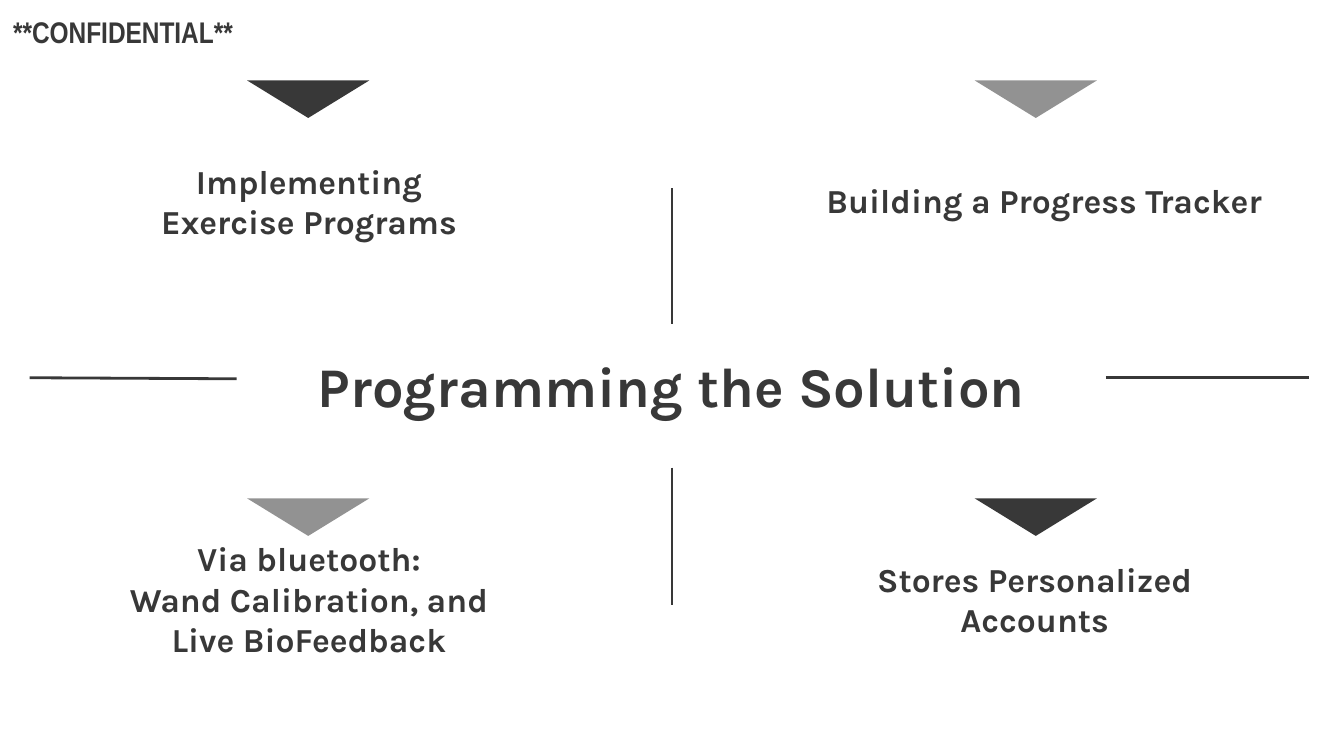
from dataclasses import dataclass

from lxml.etree import SubElement
from pptx import Presentation
from pptx.dml.color import RGBColor
from pptx.enum.shapes import MSO_CONNECTOR, MSO_SHAPE
from pptx.enum.text import MSO_ANCHOR, PP_ALIGN
from pptx.oxml.ns import qn
from pptx.util import Cm, Pt


@dataclass(frozen=True)
class Theme:
    dark: RGBColor = RGBColor(0x38, 0x38, 0x38)
    gray: RGBColor = RGBColor(0x92, 0x92, 0x92)
    head: Pt = Pt(30)
    body: Pt = Pt(18)
    mark: Pt = Pt(16)
    rule: Pt = Pt(1.5)
    font: str = "Karla"
    slim: str = "Arial Narrow"


THEME = Theme()
PAD = Cm(0.25)
LEFT, RIGHT = 4.67, 18.42
TOP, LOW = 1.52, 9.42

# Each topic: lines, box (left, top, width, height)
TOPICS = [
    (["Implementing Exercise Programs"], (2.49, 3.33, 6.7, 0.94)),
    (["Via bluetooth:", "Wand Calibration, and Live BioFeedback"],
     (1.8, 10.85, 8.08, 0.94)),
    (["Building a Progress Tracker"], (13.87, 2.11, 11.73, 3.35)),
    (["Stores Personalized Accounts"], (15.11, 10.85, 8.89, 0.94)),
]
ARROWS = [
    (LEFT, TOP, THEME.dark),
    (LEFT, LOW, THEME.gray),
    (RIGHT, TOP, THEME.gray),
    (RIGHT, LOW, THEME.dark),
]
# Rules around the title: start x, start y, end x, end y
RULES = [
    (0.56, 7.14, 4.47, 7.16),
    (20.9, 7.14, 24.74, 7.14),
    (12.7, 8.84, 12.7, 11.43),
    (12.7, 3.56, 12.7, 6.12),
]


def style(item, form):
    for name, value in form.items():
        setattr(item, name, value)


def add_text(slide, lines, box, size, font=THEME.font,
             align=PP_ALIGN.CENTER, anchor=MSO_ANCHOR.MIDDLE):
    frame = slide.shapes.add_textbox(*map(Cm, box)).text_frame
    style(frame, {
        "word_wrap": True, "vertical_anchor": anchor,
        "margin_left": PAD, "margin_right": PAD,
        "margin_top": PAD, "margin_bottom": PAD,
    })
    frame.text = "\n".join(lines)
    for para in frame.paragraphs:
        para.alignment = align
        for run in para.runs:
            style(run.font, {"name": font, "size": size, "bold": True})
            run.font.color.rgb = THEME.dark


def add_arrow(slide, left, top, color):
    """Add a triangle that points down."""
    shape = slide.shapes.add_shape(
        MSO_SHAPE.ISOSCELES_TRIANGLE, Cm(left), Cm(top), Cm(2.31), Cm(0.71))
    shape.rotation = 180
    shape.shadow.inherit = False
    shape.fill.solid()
    shape.fill.fore_color.rgb = color
    shape.line.fill.background()


def add_rule(slide, ends):
    rule = slide.shapes.add_connector(MSO_CONNECTOR.STRAIGHT, *map(Cm, ends))
    rule.line.width = THEME.rule
    rule.line.color.rgb = THEME.dark
    SubElement(rule.element.spPr, qn("a:effectLst"))


def main():
    deck = Presentation()
    style(deck, {"slide_width": Cm(25.4), "slide_height": Cm(14.29)})
    slide = deck.slides.add_slide(deck.slide_layouts[6])

    add_text(slide, ["Programming the Solution"], (3.84, 6.4, 17.7, 1.47),
             THEME.head, anchor=MSO_ANCHOR.TOP)
    for lines, box in TOPICS:
        add_text(slide, lines, box, THEME.body)
    for arrow in ARROWS:
        add_arrow(slide, *arrow)
    for ends in RULES:
        add_rule(slide, ends)
    add_text(slide, ["**CONFIDENTIAL**"], (0, 0, 8.33, 1.19), THEME.mark,
             THEME.slim, PP_ALIGN.LEFT, MSO_ANCHOR.TOP)

    deck.save("out.pptx")


if __name__ == "__main__":
    main()
